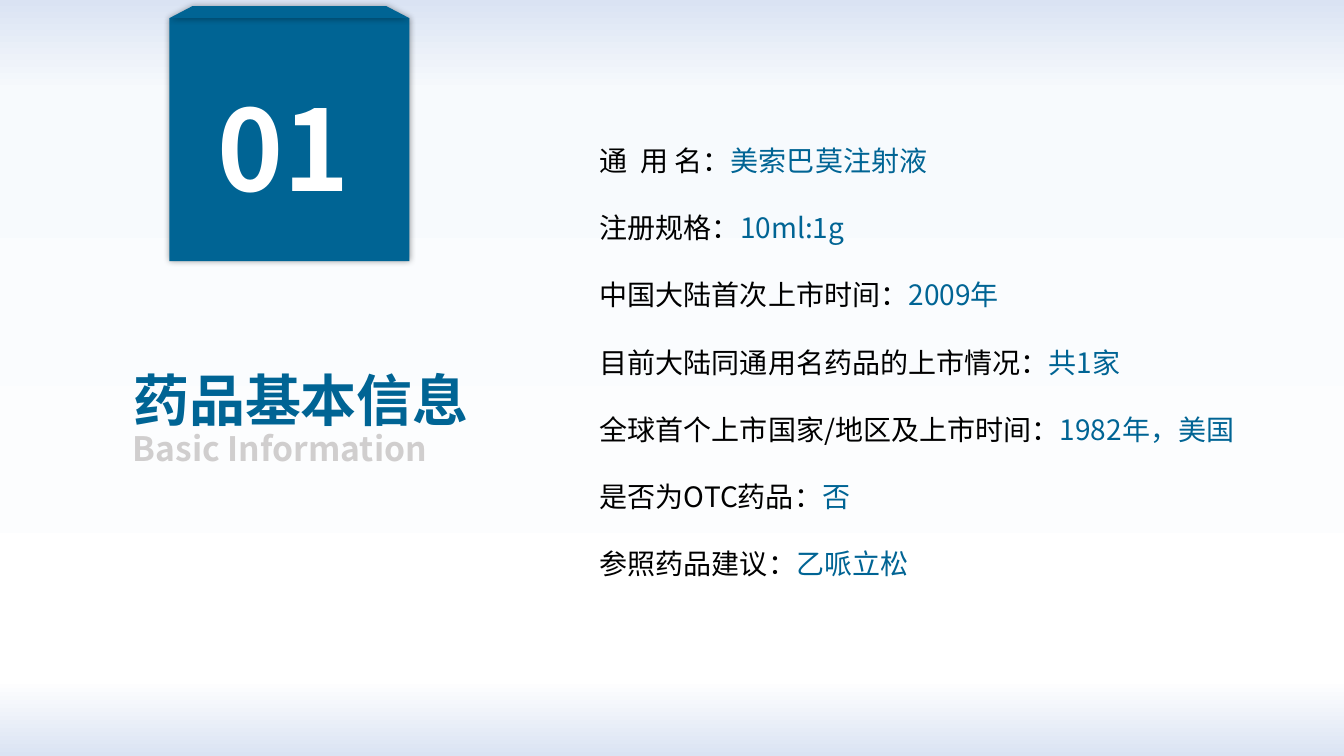
from copy import deepcopy
from dataclasses import dataclass

from lxml.etree import SubElement
from pptx import Presentation
from pptx.dml.color import RGBColor
from pptx.enum.shapes import MSO_SHAPE
from pptx.enum.text import MSO_ANCHOR, MSO_AUTO_SIZE, PP_ALIGN
from pptx.oxml.ns import qn
from pptx.shapes.base import BaseShape
from pptx.slide import Slide
from pptx.util import Inches, Pt

BLUE = RGBColor(0x00, 0x64, 0x94)
BLACK = RGBColor(0x00, 0x00, 0x00)
WHITE = RGBColor(0xFF, 0xFF, 0xFF)
GREY = RGBColor(0xD0, 0xCE, 0xCE)
PALE_BLUE = RGBColor(0xDA, 0xE3, 0xF3)
MIST = RGBColor(0xF7, 0xFA, 0xFD)
FONT = "Noto Sans CJK SC"

BACKGROUND_STOPS = [(0, PALE_BLUE), (12, MIST), (90, WHITE), (100, PALE_BLUE)]
TAG_LEFT, TAG_TOP = Inches(1.68), Inches(0.18)
TAG_WIDTH, TAG_HEIGHT = Inches(2.38), Inches(2.41)
FLAP_TOP, FLAP_INSET = Inches(0.06), Inches(0.23)


@dataclass(frozen=True)
class Span:
    text: str
    size: int
    color: RGBColor
    bold: bool = False


@dataclass(frozen=True)
class TextBlock:
    left: float
    top: float
    width: float
    height: float
    paragraphs: list[list[Span]]
    align: PP_ALIGN
    line_spacing: float


FACTS = [
    ("通  用 名：", "美索巴莫注射液"),
    ("注册规格：", "10ml:1g"),
    ("中国大陆首次上市时间：", "2009年"),
    ("目前大陆同通用名药品的上市情况：", "共1家"),
    ("全球首个上市国家/地区及上市时间：", "1982年，美国"),
    ("是否为OTC药品：", "否"),
    ("参照药品建议：", "乙哌立松"),
]

TITLE = TextBlock(0.74, 3.24, 4.49, 0.99, [[Span("药品基本信息", 40, BLUE, True)]],
                  PP_ALIGN.CENTER, 1.5)
BLOCKS = [
    TextBlock(2.06, 0.74, 1.63, 1.45, [[Span("01", 80, WHITE, True)]],
              PP_ALIGN.JUSTIFY, 1.0),
    TextBlock(5.85, 1.04, 7.01, 4.81,
              [[Span(label, 20, BLACK), Span(value, 20, BLUE)] for label, value in FACTS],
              PP_ALIGN.LEFT, 2.0),
    TextBlock(1.22, 4.0, 3.45, 0.64, [[Span("Basic Information", 24, GREY, True)]],
              PP_ALIGN.JUSTIFY, 1.5),
]


def set_background(page: Slide) -> None:
    fill = page.background.fill
    fill.gradient()
    fill.gradient_angle = 270  # counter-clockwise, so the colours run downwards
    stop_list = fill.gradient_stops[0]._gs.getparent()
    template = deepcopy(stop_list[0])
    for old_stop in list(stop_list):
        stop_list.remove(old_stop)
    for _ in BACKGROUND_STOPS:
        stop_list.append(deepcopy(template))
    for stop, (percent, color) in zip(fill.gradient_stops, BACKGROUND_STOPS):
        stop.position = percent / 100
        stop.color.rgb = color


def style_tag_part(shape: BaseShape) -> None:
    """Fill blue without an outline and add a soft, centred shadow."""
    shape.fill.solid()
    shape.fill.fore_color.rgb = BLUE
    shape.line.fill.background()
    shape.shadow.inherit = False
    effects = shape._element.spPr.find(qn("a:effectLst"))
    shadow = SubElement(effects, qn("a:outerShdw"), blurRad=str(Pt(5)), dist="0", dir="0",
                        algn="ctr", rotWithShape="0")
    color = SubElement(shadow, qn("a:srgbClr"), val=str(BLACK))
    SubElement(color, qn("a:alpha"), val="40000")


def add_tag(page: Slide) -> None:
    body = page.shapes.add_shape(MSO_SHAPE.RECTANGLE, TAG_LEFT, TAG_TOP, TAG_WIDTH, TAG_HEIGHT)
    right = TAG_LEFT + TAG_WIDTH
    builder = page.shapes.build_freeform(TAG_LEFT + FLAP_INSET, FLAP_TOP)
    builder.add_line_segments([(right - FLAP_INSET, FLAP_TOP), (right, TAG_TOP),
                               (TAG_LEFT, TAG_TOP)], close=True)
    flap = builder.convert_to_shape()
    for part in (body, flap):
        style_tag_part(part)


def fill_text(box: BaseShape, block: TextBlock) -> None:
    box.left, box.top = Inches(block.left), Inches(block.top)
    box.width, box.height = Inches(block.width), Inches(block.height)
    frame = box.text_frame
    frame.word_wrap = True
    frame.auto_size = MSO_AUTO_SIZE.SHAPE_TO_FIT_TEXT
    frame.vertical_anchor = MSO_ANCHOR.TOP
    for index, spans in enumerate(block.paragraphs):
        para = frame.add_paragraph() if index else frame.paragraphs[0]
        para.alignment = block.align
        para.line_spacing = block.line_spacing
        for span in spans:
            run = para.add_run()
            run.text = span.text
            run.font.size = Pt(span.size)
            run.font.bold = span.bold
            run.font.color.rgb = span.color
            run.font.name = FONT
            SubElement(run.font._element, qn("a:ea"), typeface=FONT)


def main() -> None:
    deck = Presentation()
    deck.slide_width, deck.slide_height = Inches(13.33), Inches(7.5)
    page = deck.slides.add_slide(deck.slide_layouts.get_by_name("Title Only"))
    set_background(page)
    add_tag(page)
    fill_text(page.shapes.title, TITLE)
    for block in BLOCKS:
        fill_text(page.shapes.add_textbox(0, 0, 0, 0), block)
    deck.save("out.pptx")


if __name__ == "__main__":
    main()
